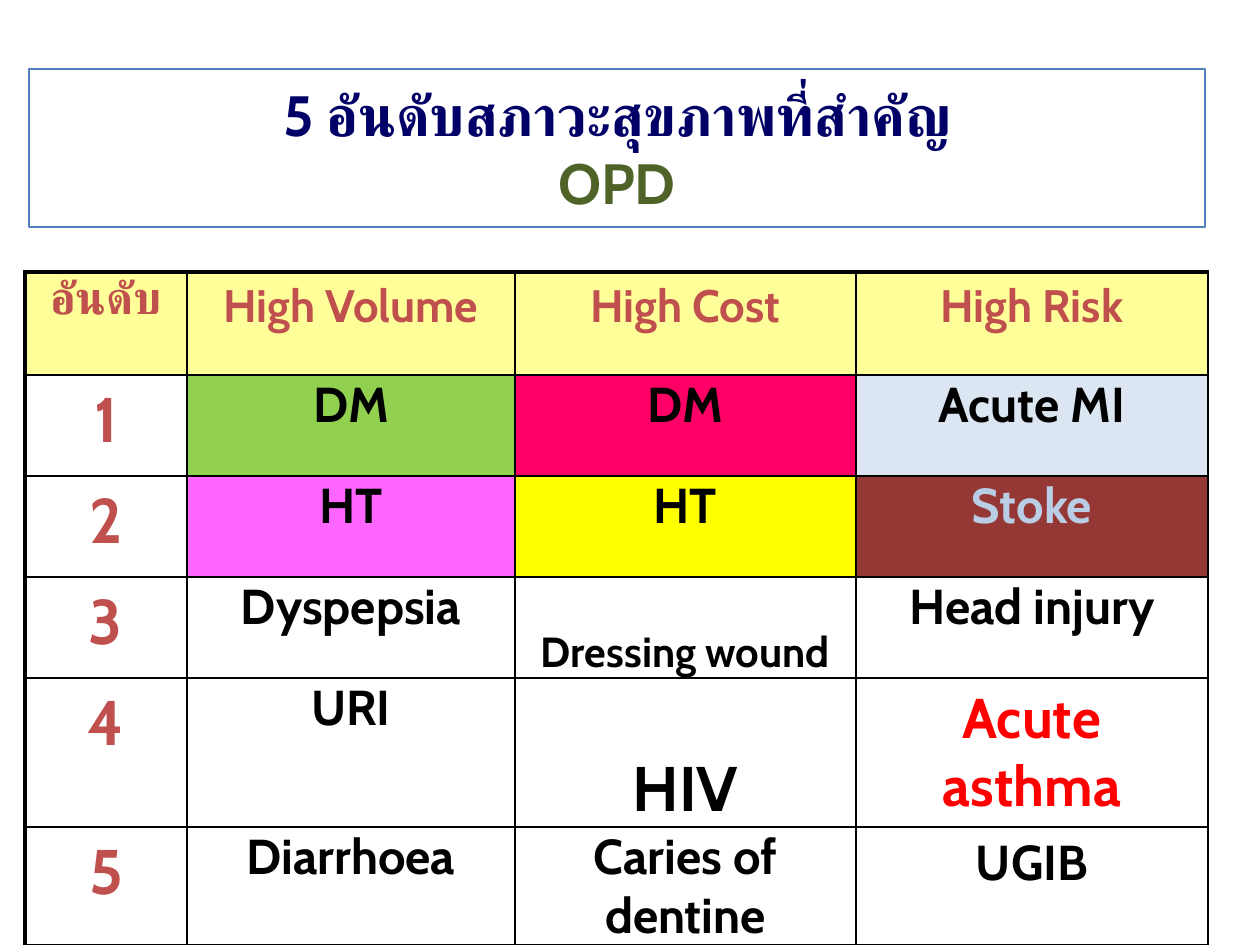
import pptx
import pptx.util
from lxml import etree
from pptx.dml.color import RGBColor
from pptx.enum.text import MSO_ANCHOR, MSO_AUTO_SIZE, PP_ALIGN
from pptx.oxml.ns import qn

EMU_PER_PX = 914400 / 126
FONT = "Cabin"

NAVY = RGBColor(0x00, 0x00, 0x66)
OLIVE = RGBColor(0x4F, 0x62, 0x28)
BLUE = RGBColor(0x4F, 0x81, 0xBD)
BLACK = RGBColor(0x00, 0x00, 0x00)
BRICK = RGBColor(0xC0, 0x50, 0x4D)
RED = RGBColor(0xFF, 0x00, 0x00)
CREAM = RGBColor(0xFF, 0xFF, 0x99)
GREEN = RGBColor(0x92, 0xD0, 0x50)
PINK = RGBColor(0xFF, 0x00, 0x66)
PALE_BLUE = RGBColor(0xDC, 0xE6, 0xF2)
VIOLET = RGBColor(0xFF, 0x66, 0xFF)
YELLOW = RGBColor(0xFF, 0xFF, 0x00)
MAROON = RGBColor(0x95, 0x37, 0x35)
LIGHT_BLUE = RGBColor(0xB9, 0xCD, 0xE5)

COLUMN_WIDTHS = [162, 328, 341, 352]
ROW_HEIGHTS = [103, 101, 101, 101, 148, 117]
HEADERS = ["อันดับ", "High Volume", "High Cost", "High Risk"]
# Each entry: text and whatever differs from a plain condition cell
CONDITIONS = [
    [("DM", {"fill": GREEN}), ("DM", {"fill": PINK}),
     ("Acute MI", {"fill": PALE_BLUE})],
    [("HT", {"fill": VIOLET}), ("HT", {"fill": YELLOW}),
     ("Stoke", {"fill": MAROON, "color": LIGHT_BLUE})],
    [("Dyspepsia", {}), ("Dressing wound", {"size": 24, "bottom": True}),
     ("Head injury", {})],
    [("URI", {}), ("HIV", {"size": 36, "bottom": True}),
     ("Acute asthma", {"size": 32, "color": RED, "padded": True})],
    [("Diarrhoea", {}), ("Caries of dentine", {"bottom": True}),
     ("UGIB", {"padded": True})],
]


def px(n):
    return pptx.util.Emu(round(n * EMU_PER_PX))


def set_font(font, size, color):
    font.name = FONT
    font.size = pptx.util.Pt(size)
    font.bold = True
    font.color.rgb = color


def set_borders(cell, widths):
    """Draw black borders; widths in points for left, right, top, bottom."""
    tcPr = cell._tc.get_or_add_tcPr()
    for i, (tag, width) in enumerate(zip(("lnL", "lnR", "lnT", "lnB"), widths)):
        ln = etree.Element(qn(f"a:{tag}"), w=str(pptx.util.Pt(width)))
        fill = etree.SubElement(ln, qn("a:solidFill"))
        etree.SubElement(fill, qn("a:srgbClr"), val=str(BLACK))
        tcPr.insert(i, ln)


def fill_cell(cell, text, size=28, color=BLACK, fill=None, bottom=False, padded=False):
    cell.margin_left = cell.margin_right = pptx.util.Inches(0.1 if padded else 0)
    cell.margin_top = cell.margin_bottom = pptx.util.Inches(0.05 if padded else 0)
    cell.vertical_anchor = MSO_ANCHOR.BOTTOM if bottom else MSO_ANCHOR.TOP
    if fill is None:
        cell.fill.background()
    else:
        cell.fill.solid()
        cell.fill.fore_color.rgb = fill
    p = cell.text_frame.paragraphs[0]
    p.text = text
    p.alignment = PP_ALIGN.CENTER
    set_font(p.font, size, color)


def add_title(s):
    sp = s.shapes.title
    sp.left, sp.top, sp.width, sp.height = px(29), px(69), px(1176), px(158)
    sp.line.color.rgb = BLUE
    sp.line.width = pptx.util.Pt(0.75)
    tf = sp.text_frame
    tf.auto_size = MSO_AUTO_SIZE.NONE
    tf.vertical_anchor = MSO_ANCHOR.MIDDLE
    p = tf.paragraphs[0]
    p.alignment = PP_ALIGN.CENTER
    set_font(p.font, 32.4, NAVY)
    p.add_run().text = "5 อันดับสภาวะสุขภาพที่สำคัญ"
    p.add_line_break()
    r = p.add_run()
    r.text = "OPD"
    r.font.color.rgb = OLIVE


def add_ranking_table(s):
    table = s.shapes.add_table(
        len(ROW_HEIGHTS), len(COLUMN_WIDTHS), px(25), px(272),
        px(sum(COLUMN_WIDTHS)), px(sum(ROW_HEIGHTS))).table
    table.first_row = table.horz_banding = False
    for column, width in zip(table.columns, COLUMN_WIDTHS):
        column.width = px(width)
    for row, height in zip(table.rows, ROW_HEIGHTS):
        row.height = px(height)

    for i, header in enumerate(HEADERS):
        fill_cell(table.cell(0, i), header, 26, BRICK, CREAM, padded=True)
    for rank, conditions in enumerate(CONDITIONS, 1):
        fill_cell(table.cell(rank, 0), str(rank), 36, BRICK, padded=True)
        for i, (text, style) in enumerate(conditions, 1):
            fill_cell(table.cell(rank, i), text, **style)

    last = len(ROW_HEIGHTS) - 1
    for j in range(len(ROW_HEIGHTS)):
        for i in range(len(COLUMN_WIDTHS)):
            set_borders(table.cell(j, i), (2.25 if i == 0 else 1, 1,
                                           2.25 if j == 0 else 1,
                                           2.25 if j == last else 1))


def main():
    prs = pptx.Presentation()
    prs.slide_width, prs.slide_height = px(1260), px(945)
    s = prs.slides.add_slide(prs.slide_layouts[5])
    add_title(s)
    add_ranking_table(s)
    prs.save("out.pptx")


if __name__ == "__main__":
    main()
